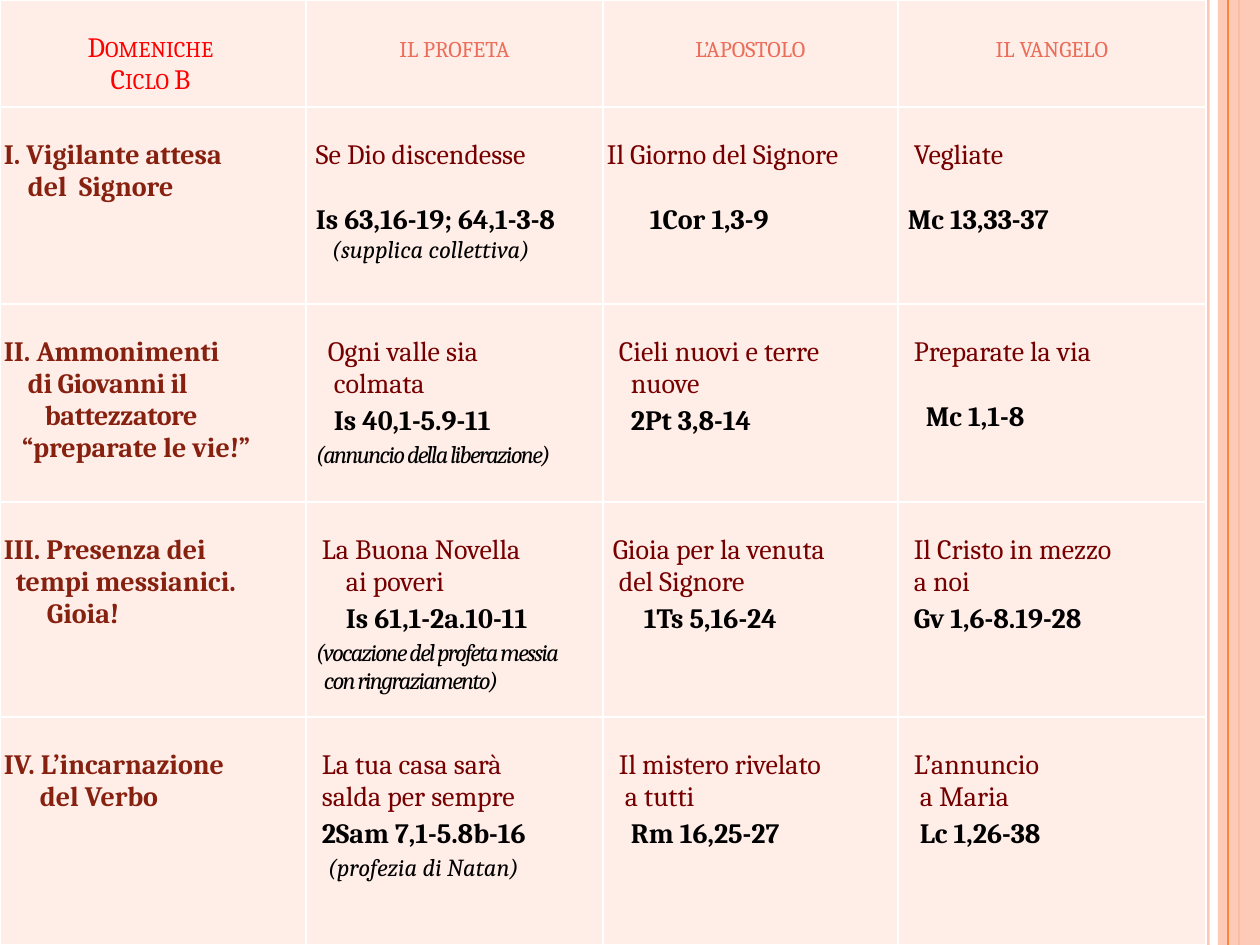
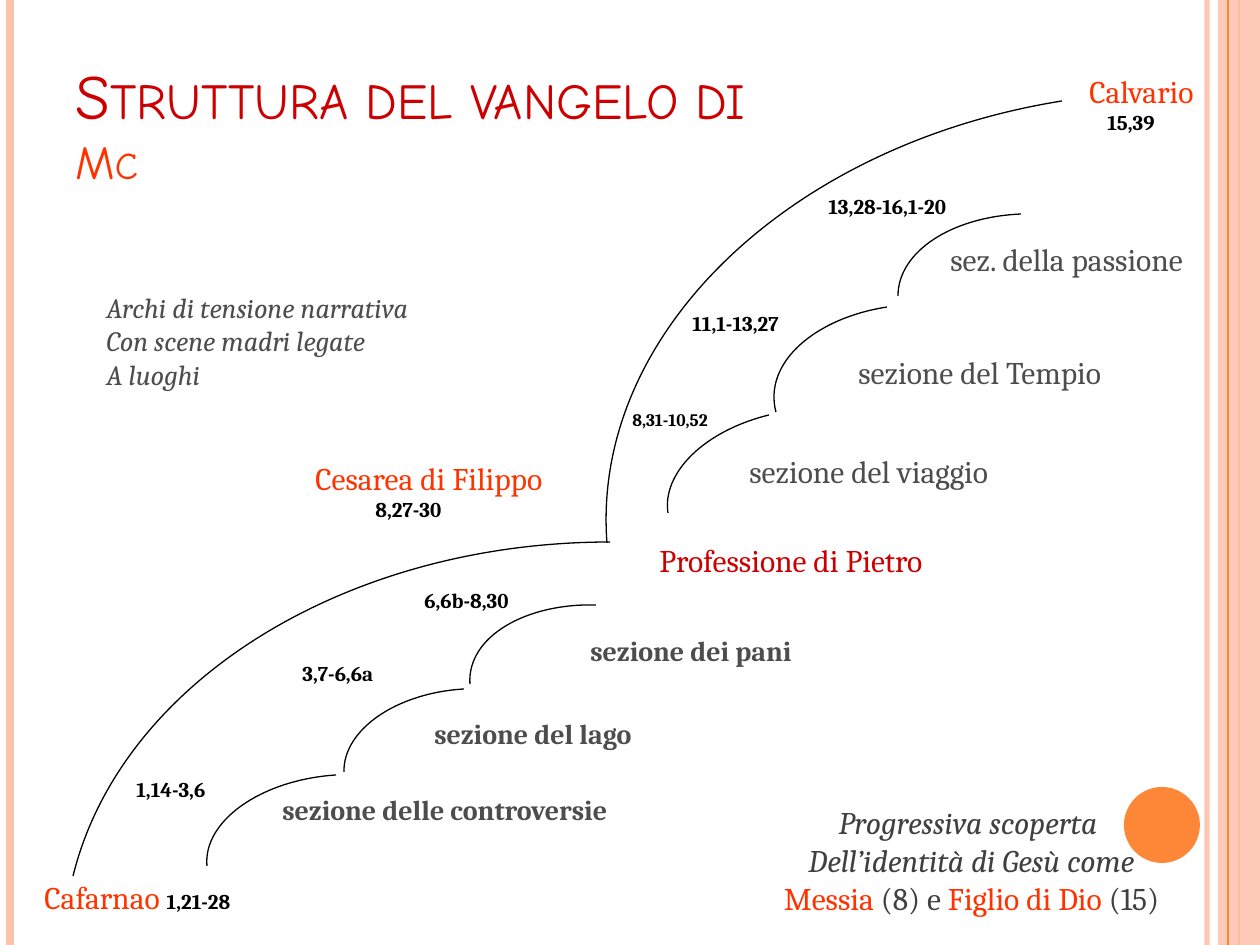
from dataclasses import dataclass

from lxml import etree
from pptx import Presentation
from pptx.dml.color import RGBColor
from pptx.enum.shapes import MSO_CONNECTOR, MSO_SHAPE
from pptx.enum.text import MSO_ANCHOR, MSO_AUTO_SIZE, PP_ALIGN
from pptx.oxml.ns import qn
from pptx.util import Emu, Pt

STRAIGHT = MSO_CONNECTOR.STRAIGHT
RECTANGLE, OVAL = MSO_SHAPE.RECTANGLE, MSO_SHAPE.OVAL
CENTER, LEFT = PP_ALIGN.CENTER, PP_ALIGN.LEFT
TOP, BOTTOM = MSO_ANCHOR.TOP, MSO_ANCHOR.BOTTOM
FIT_SHAPE, NO_FIT = MSO_AUTO_SIZE.SHAPE_TO_FIT_TEXT, MSO_AUTO_SIZE.NONE

WIDTH, HEIGHT = 1260, 945
EMU_PER_PX = 914400 / 126


@dataclass(frozen=True)
class Style:
    size: int
    color: str
    bold: bool = False
    italic: bool = False
    caps: bool = False
    spacing: int = 0  # hundredths of a point
    font: str = "Cambria"


class Theme:
    ORANGE, PEACH, CELL = "FE8637", "FEC3AE", "FFEDE8"
    WHITE, BLACK = "FFFFFF", "000000"
    CYCLE = Style(16, "FF0000", caps=True)
    COLUMN = Style(16, "EB6E5A", caps=True)
    SUNDAY = Style(16, "862110", bold=True)
    TIGHT_SUNDAY = Style(16, "862110", bold=True, spacing=-20)
    READING = Style(16, "760000")
    VERSE = Style(16, BLACK, bold=True)
    NOTE = Style(14, BLACK, italic=True)
    TIGHT_NOTE = Style(14, BLACK, italic=True, spacing=-100)
    TITLE = Style(36, "CC0000", caps=True, font="Comic Neue")
    TITLE_END = Style(27, "FF3300", caps=True, font="Comic Neue")
    PLACE = Style(18, "FF3300")
    CONFESSION = Style(18, "CC0000")
    SECTION = Style(18, "4D4D4D")
    BOLD_SECTION = Style(16, "4D4D4D", bold=True)
    REFERENCE = Style(12, BLACK, bold=True)
    SMALL_REFERENCE = Style(10, BLACK, bold=True)
    REMARK = Style(16, "4D4D4D", italic=True)
    DISCOVERY = Style(18, "404040", italic=True)
    DISCOVERY_PLAIN = Style(18, "404040")


# Lectionary table: lines are (indent, text) or (indent, text, style)
COLUMNS = (306, 297, 295, 308)
ROWS = (107, 197, 198, 215, 228)
TOP_MARGIN, SIDE_MARGIN = 32, 4
EMPTY_LINE, SMALL_GAP, NOTE_GAP = 33, 5, 4

HEADERS = [
    (Theme.CYCLE, ["Domeniche ", "Ciclo B "]),
    (Theme.COLUMN, ["il profeta"]),
    (Theme.COLUMN, ["l’apostolo"]),
    (Theme.COLUMN, ["il vangelo"]),
]

# Each Sunday: its name, then (reading lines, verse, note lines, note style)
SUNDAYS = [
    ([(0, "I. Vigilante attesa"), (24, "del  Signore")], [
        ([(6, "Se Dio discendesse")], (6, "Is 63,16-19; 64,1-3-8"),
         [(22, "(supplica collettiva)")], Theme.NOTE),
        ([(0, "Il Giorno del Signore")], (43, "1Cor 1,3-9")),
        ([(12, "Vegliate")], (6, "Mc 13,33-37")),
    ]),
    ([(0, "II. Ammonimenti"), (24, "di Giovanni il", Theme.TIGHT_SUNDAY),
      (41, "battezzatore", Theme.TIGHT_SUNDAY), (18, "“preparate le vie!”")], [
        ([(18, "Ogni valle sia"), (24, "colmata")], (24, "Is 40,1-5.9-11"),
         [(6, "(annuncio della liberazione)")], Theme.TIGHT_NOTE),
        ([(12, "Cieli nuovi e terre"), (24, "nuove")], (24, "2Pt 3,8-14")),
        ([(12, "Preparate la via")], (24, "Mc 1,1-8")),
    ]),
    ([(0, "III. Presenza dei"), (12, "tempi messianici."), (43, "Gioia!")], [
        ([(12, "La Buona Novella"), (36, "ai poveri")], (36, "Is 61,1-2a.10-11"),
         [(6, "(vocazione del profeta messia"), (14, "con ringraziamento)")],
         Theme.TIGHT_NOTE),
        ([(6, "Gioia per la venuta"), (12, "del Signore")], (37, "1Ts 5,16-24")),
        ([(12, "Il Cristo in mezzo"), (12, "a noi")], (12, "Gv 1,6-8.19-28")),
    ]),
    ([(0, "IV. L’incarnazione"), (36, "del Verbo")], [
        ([(12, "La tua casa sarà"), (12, "salda per sempre")], (12, "2Sam 7,1-5.8b-16"),
         [(18, "(profezia di Natan)")], Theme.NOTE),
        ([(12, "Il mistero rivelato"), (18, "a tutti")], (24, "Rm 16,25-27")),
        ([(12, "L’annuncio"), (18, "a Maria")], (18, "Lc 1,26-38")),
    ]),
]

# Gospel structure: arcs are start, two controls, end
ARCS = [
    ((1062, 101), (788, 145), (591, 335), (607, 543)),
    ((610, 542), (347, 542), (121, 681), (73, 876)),
    ((336, 775), (261, 780), (203, 821), (207, 866)),
    ((464, 689), (396, 693), (343, 730), (344, 772)),
    ((596, 605), (527, 603), (467, 636), (470, 684)),
    ((769, 415), (704, 431), (662, 473), (668, 513)),
    ((887, 307), (816, 318), (763, 362), (776, 412)),
    ((1021, 214), (951, 217), (898, 252), (898, 296)),
]

TITLE_BOX = (63, 37, 696, 158)
TITLE_RUNS = [("Struttura del vangelo di ", Theme.TITLE), ("Mc", Theme.TITLE_END)]

# Single-line labels by style and height: (left, top, width, text)
LABELS = [
    (Theme.BOLD_SECTION, 47, [
        (270, 786, 375, "sezione delle controversie"),
        (422, 710, 242, "sezione del lago"),
        (578, 627, 242, "sezione dei pani")]),
    (Theme.CONFESSION, 50, [(647, 535, 316, "Professione di Pietro")]),
    (Theme.SECTION, 50, [
        (737, 446, 294, "sezione del viaggio"),
        (846, 347, 299, "sezione del Tempio"),
        (938, 234, 294, "sez. della passione")]),
    (Theme.REFERENCE, 38, [
        (124, 770, 102, "1,14-3,6"),
        (290, 654, 102, "3,7-6,6a"),
        (412, 581, 115, "6,6b-8,30"),
        (680, 304, 125, "11,1-13,27"),
        (816, 187, 155, "13,28-16,1-20")]),
    (Theme.SMALL_REFERENCE, 34, [(620, 403, 108, "8,31-10,52")]),
]

# Places with the verse below: box, name, verse indent, verse
PLACES = [
    ((303, 453, 280, 76), "Cesarea di Filippo", 60, "8,27-30"),
    ((1077, 66, 141, 76), "Calvario", 18, "15,39"),
]
START_BOX = (32, 872, 234, 50)
START_RUNS = [("Cafarnao ", Theme.PLACE), ("1,21-28", Theme.REFERENCE)]
REMARK_BOX = (94, 284, 349, 113)
REMARK_LINES = ["Archi di tensione narrativa", "Con scene madri legate", "A luoghi"]
DISCOVERY_BOX = (734, 797, 475, 126)
DISCOVERY_LINES = [
    [("Progressiva scoperta ", Theme.DISCOVERY)],
    [("Dell’identità di Gesù come", Theme.DISCOVERY)],
    [("Messia ", Theme.PLACE), ("(8) e ", Theme.DISCOVERY_PLAIN),
     ("Figlio di Dio ", Theme.PLACE), ("(15)", Theme.DISCOVERY_PLAIN)],
]


def px(value):
    return Emu(round(value * EMU_PER_PX))


def box_px(box):
    return [px(value) for value in box]


def rgb(color):
    return RGBColor.from_string(color)


def paint(fill, color, opacity=100):
    fill.solid()
    fill.fore_color.rgb = rgb(color)
    if opacity < 100:
        color_element = fill._xPr.find(".//" + qn("a:srgbClr"))
        etree.SubElement(color_element, qn("a:alpha")).set("val", str(opacity * 1000))


# Text
def set_font(font, style):
    font.name, font.size = style.font, Pt(style.size)
    font.bold, font.italic = style.bold, style.italic
    font.color.rgb = rgb(style.color)


def write_line(paragraph, runs, indent=0, gap=0, align=LEFT):
    paragraph.alignment = align
    paragraph.space_before = px(gap)
    properties = paragraph._p.get_or_add_pPr()
    properties.set("marL", str(px(indent)))
    properties.set("indent", "0")
    shared = len({style for _, style in runs}) == 1
    if shared:
        set_font(paragraph.font, runs[0][1])
    for text, style in runs:
        run = paragraph.add_run()
        run.text = text
        if not shared:
            set_font(run.font, style)
        if style.caps:
            run._r.get_or_add_rPr().set("cap", "small")
        if style.spacing:
            run._r.get_or_add_rPr().set("spc", str(style.spacing))


def write_lines(frame, lines, align=LEFT):
    """Each line is (runs, indent, gap before)."""
    for index, (runs, indent, gap) in enumerate(lines):
        paragraph = frame.add_paragraph() if index else frame.paragraphs[0]
        write_line(paragraph, runs, indent, gap, align)


def add_text(slide, box, lines, wrap=False, align=LEFT, anchor=TOP, fit=FIT_SHAPE):
    frame = slide.shapes.add_textbox(*box_px(box)).text_frame
    frame.word_wrap, frame.auto_size, frame.vertical_anchor = wrap, fit, anchor
    write_lines(frame, lines, align)


# Shared side bands and disc
def add_rule(slide, x, color, weight, opacity=100):
    rule = slide.shapes.add_connector(STRAIGHT, px(x), 0, px(x), px(HEIGHT))
    paint(rule.line.fill, color, opacity)
    rule.line.width = Pt(weight)
    etree.SubElement(rule._element.spPr, qn("a:effectLst"))


def add_solid(slide, kind, box, color, opacity=100):
    shape = slide.shapes.add_shape(kind, *box_px(box))
    shape.shadow.inherit = False
    paint(shape.fill, color, opacity)
    shape.line.fill.background()


def add_framed_slide(presentation):
    slide = presentation.slides.add_slide(presentation.slide_layouts[6])
    paint(slide.background.fill, Theme.WHITE)
    add_rule(slide, 1207, Theme.PEACH, 3, 93)
    add_rule(slide, 10, Theme.PEACH, 4.5)
    add_rule(slide, 1239, Theme.ORANGE, 1.5)
    add_solid(slide, RECTANGLE, (1218, 0, 42, HEIGHT), Theme.PEACH, 87)
    add_rule(slide, 1228, Theme.ORANGE, 0.75)
    add_solid(slide, OVAL, (1124, 787, 76, 76), Theme.ORANGE)
    return slide


# Table slide
def name_lines(name):
    return [([(text, style[0] if style else Theme.SUNDAY)], indent, 0)
            for indent, text, *style in name]


def reading_lines(reading, verse, notes=(), note_style=Theme.NOTE):
    long_reading = len(reading) > 1
    lines = [([(text, Theme.READING)], indent, 0) for indent, text in reading]
    lines.append(([(verse[1], Theme.VERSE)], verse[0],
                  SMALL_GAP if long_reading else EMPTY_LINE))
    for index, (indent, text) in enumerate(notes):
        gap = NOTE_GAP if long_reading and index == 0 else 0
        lines.append(([(text, note_style)], indent, gap))
    return lines


def fill_cell(cell, lines, align=LEFT):
    cell.margin_left = cell.margin_right = px(SIDE_MARGIN)
    cell.margin_top, cell.margin_bottom = px(TOP_MARGIN), 0
    properties = cell._tc.get_or_add_tcPr()
    for side in ("a:lnL", "a:lnR", "a:lnT", "a:lnB"):
        border = etree.SubElement(properties, qn(side), w=str(Pt(1)))
        solid = etree.SubElement(border, qn("a:solidFill"))
        etree.SubElement(solid, qn("a:srgbClr"), val=Theme.WHITE)
    paint(cell.fill, Theme.CELL)
    write_lines(cell.text_frame, lines, align)


def build_sundays(presentation):
    slide = add_framed_slide(presentation)
    table = slide.shapes.add_table(len(ROWS), len(COLUMNS), 0, 0,
                                   px(sum(COLUMNS)), px(sum(ROWS))).table
    table.first_row = table.horz_banding = False
    for column, width in zip(table.columns, COLUMNS):
        column.width = px(width)
    for row, height in zip(table.rows, ROWS):
        row.height = px(height)
    for column, (style, texts) in enumerate(HEADERS):
        fill_cell(table.cell(0, column), [([(text, style)], 0, 0) for text in texts], CENTER)
    for row, (name, readings) in enumerate(SUNDAYS, 1):
        fill_cell(table.cell(row, 0), name_lines(name))
        for column, reading in enumerate(readings, 1):
            fill_cell(table.cell(row, column), reading_lines(*reading))


# Arc slide
def add_arc(slide, arc):
    start, *targets = [box_px(point) for point in arc]
    builder = slide.shapes.build_freeform(*start)
    builder.add_line_segments(targets, close=False)
    shape = builder.convert_to_shape()
    # Join the three segments into one cubic curve
    segments = list(shape._element.iter(qn("a:lnTo")))
    curve = etree.SubElement(segments[0].getparent(), qn("a:cubicBezTo"))
    for segment in segments:
        curve.append(segment[0])
        segment.getparent().remove(segment)
    shape.shadow.inherit = False
    shape.fill.background()
    paint(shape.line.fill, Theme.BLACK)
    shape.line.width = Pt(0.75)


def build_structure(presentation):
    slide = add_framed_slide(presentation)
    add_text(slide, TITLE_BOX, [(TITLE_RUNS, 0, 0)], wrap=True, anchor=BOTTOM, fit=NO_FIT)
    for arc in ARCS:
        add_arc(slide, arc)
    add_text(slide, START_BOX, [(START_RUNS, 0, 0)])
    for box, name, indent, verse in PLACES:
        add_text(slide, box, [([(name, Theme.PLACE)], 0, 0),
                              ([(verse, Theme.REFERENCE)], indent, 0)])
    for style, height, labels in LABELS:
        for left, top, width, text in labels:
            add_text(slide, (left, top, width, height), [([(text, style)], 0, 0)])
    add_text(slide, DISCOVERY_BOX, [(runs, 0, 0) for runs in DISCOVERY_LINES],
             wrap=True, align=CENTER)
    add_text(slide, REMARK_BOX, [([(text, Theme.REMARK)], 0, 0) for text in REMARK_LINES])


def main():
    presentation = Presentation()
    presentation.slide_width, presentation.slide_height = px(WIDTH), px(HEIGHT)
    build_sundays(presentation)
    build_structure(presentation)
    presentation.save("out.pptx")


if __name__ == "__main__":
    main()
